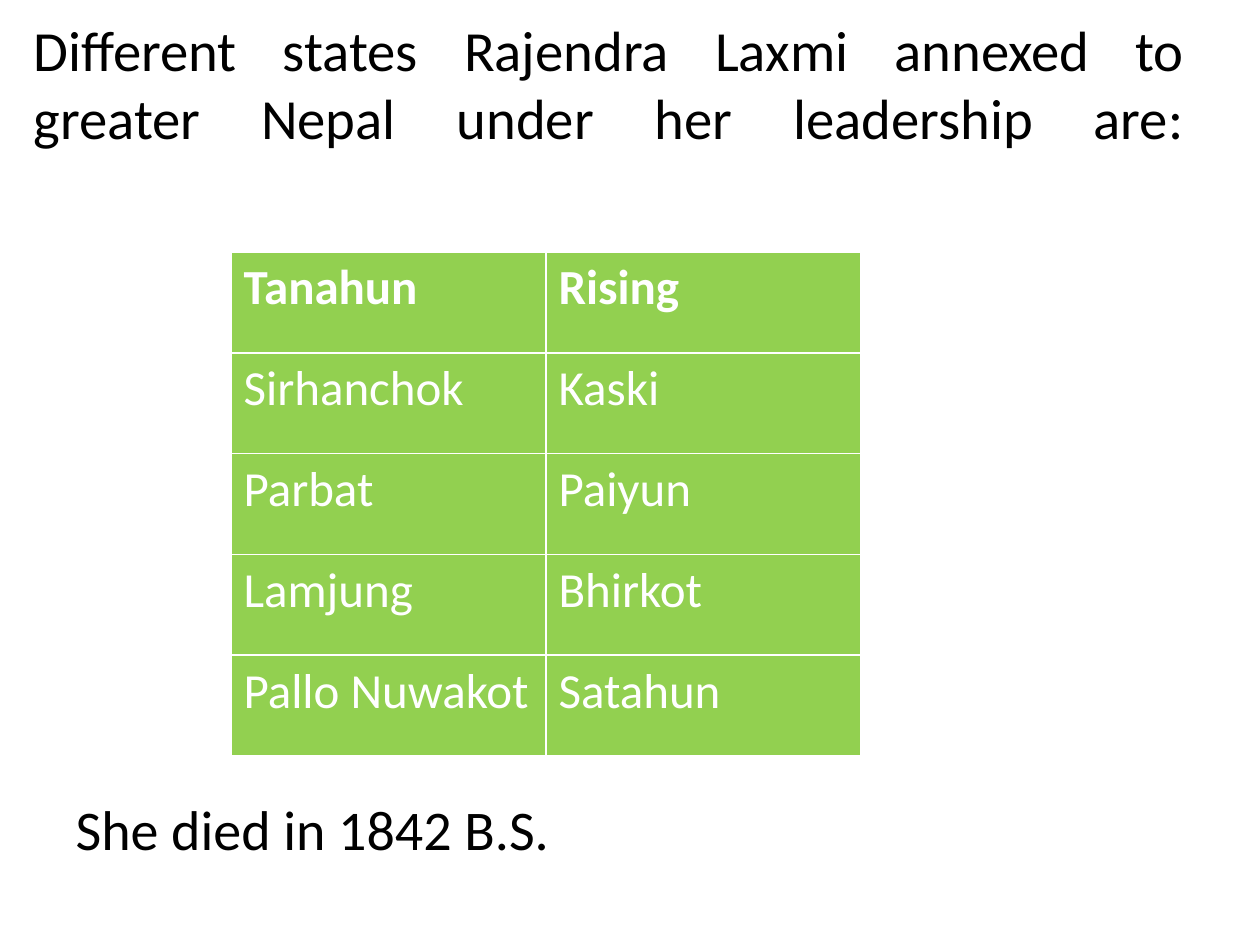
from copy import deepcopy

from lxml.etree import SubElement
from pptx import Presentation
from pptx.dml.color import RGBColor
from pptx.enum.text import MSO_ANCHOR, MSO_AUTO_SIZE, PP_ALIGN
from pptx.oxml.ns import qn
from pptx.util import Pt

EMU_PER_PX = 914400 / 126
COLORS = {"ink": "000000", "cell": "92D050", "cell_text": "FFFFFF"}
STATES = [
    ("Tanahun", "Rising"),
    ("Sirhanchok", "Kaski"),
    ("Parbat", "Paiyun"),
    ("Lamjung", "Bhirkot"),
    ("Pallo Nuwakot", "Satahun"),
]


def px(length):
    """Turn pixels into EMU."""
    return round(length * EMU_PER_PX)


def color(name):
    """Look up a colour by its role."""
    return RGBColor.from_string(COLORS[name])


def format_runs(paragraph, size, ink, bold=False):
    """Apply font, size, colour and weight to every run."""
    for run in paragraph.runs:
        run.font.name = "Calibri"
        run.font.size = Pt(size)
        run.font.bold = bold
        run.font.color.rgb = color(ink)


def fill_placeholder(placeholder, box, text, size, anchor):
    """Move a placeholder, fill it and return its paragraph."""
    placeholder.left, placeholder.top, placeholder.width, placeholder.height = map(px, box)
    frame = placeholder.text_frame
    frame.word_wrap = True
    frame.auto_size = MSO_AUTO_SIZE.NONE
    frame.vertical_anchor = anchor
    paragraph = frame.paragraphs[0]
    paragraph.text = text
    format_runs(paragraph, size, "ink")
    return paragraph


def add_heading(slide):
    """Fill the title, justified down to its closing line break."""
    heading = fill_placeholder(
        slide.shapes.title,
        (21, 38, 1176, 158),
        "Different states Rajendra Laxmi annexed to greater Nepal under her leadership are:\v",
        32.4,
        MSO_ANCHOR.MIDDLE,
    )
    heading.alignment = PP_ALIGN.JUSTIFY
    properties = heading.runs[0].font._element
    heading._p.find(qn("a:br")).append(deepcopy(properties))
    closing = deepcopy(properties)
    closing.tag = qn("a:endParaRPr")
    heading._p.append(closing)


def add_closing_note(slide):
    """Fill the body with its unbulleted line."""
    note = fill_placeholder(
        slide.placeholders[1],
        (63, 788, 1144, 94),
        "She died in 1842 B.S.",
        32,
        MSO_ANCHOR.TOP,
    )
    SubElement(note._p.get_or_add_pPr(), qn("a:buNone"))


def add_states_table(slide):
    """Add the table of annexed states."""
    box = map(px, (231, 252, 630, 504))
    table = slide.shapes.add_table(len(STATES), len(STATES[0]), *box).table
    table.horz_banding = False
    for row_index, states in enumerate(STATES):
        for column_index, state in enumerate(states):
            cell = table.cell(row_index, column_index)
            cell.fill.solid()
            cell.fill.fore_color.rgb = color("cell")
            paragraph = cell.text_frame.paragraphs[0]
            paragraph.text = state
            format_runs(paragraph, 28, "cell_text", bold=row_index == 0)


def main():
    """Build and save the slide."""
    presentation = Presentation()
    presentation.slide_width, presentation.slide_height = px(1260), px(945)
    slide = presentation.slides.add_slide(presentation.slide_layouts[1])
    add_heading(slide)
    add_closing_note(slide)
    add_states_table(slide)
    presentation.save("out.pptx")


if __name__ == "__main__":
    main()
